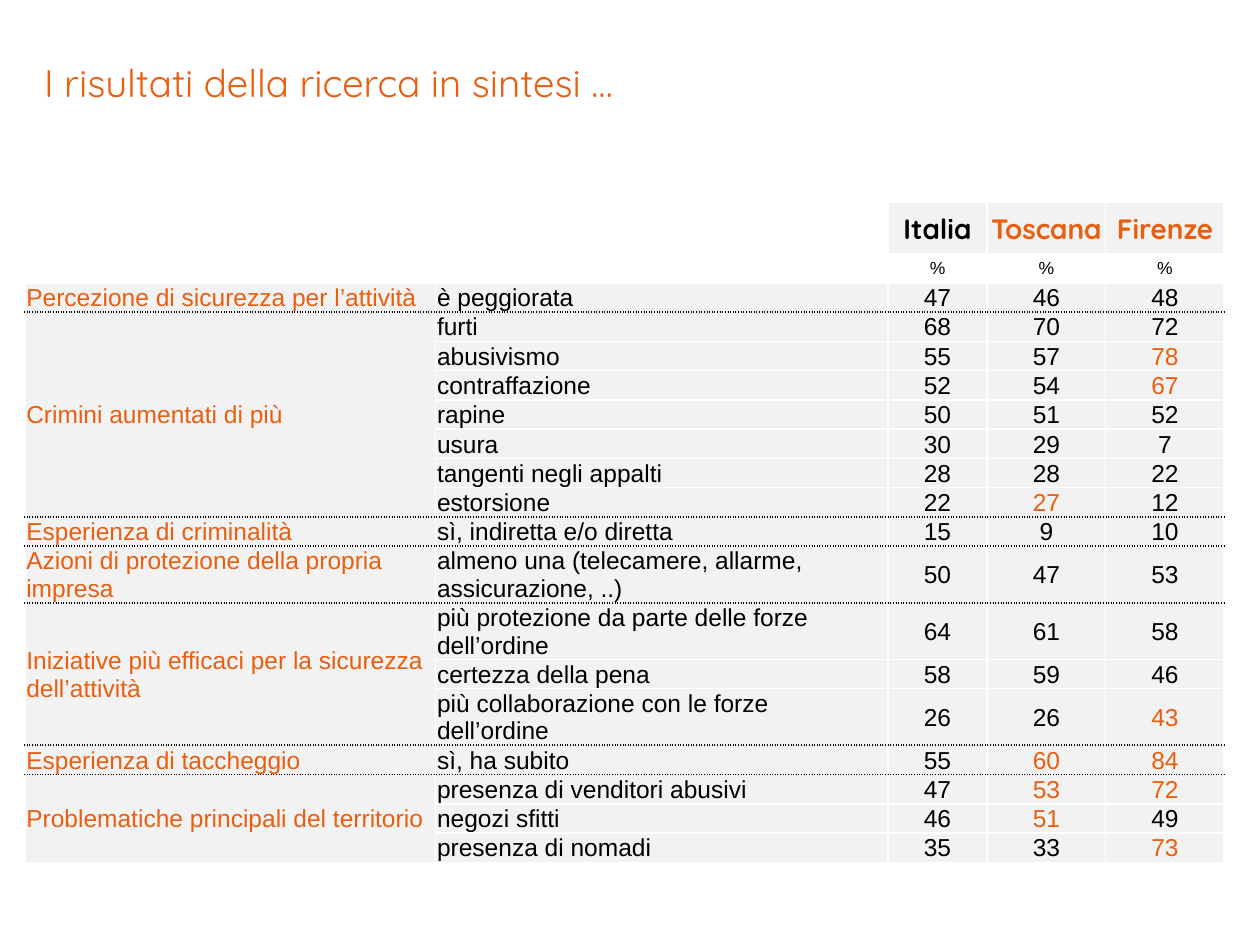
from lxml.etree import SubElement
from pptx import Presentation
from pptx.dml.color import RGBColor
from pptx.enum.text import MSO_ANCHOR as Anchor, MSO_AUTO_SIZE as AutoSize, PP_ALIGN as Align
from pptx.oxml.ns import qn
from pptx.util import Cm, Pt

ORANGE, BLACK, WHITE, GREY = "E95E0F", "000000", "FFFFFF", "F2F2F2"
COLUMN_WIDTHS = (8.28, 9.12, 2.0, 2.39, 2.39)
HEADER_HEIGHT, LINE_HEIGHT, TWO_LINE_HEIGHT = 1.03, 0.59, 1.13
TWO_LINE_LENGTH = 40
HEADERS = (("Italia", BLACK), ("Toscana", ORANGE), ("Firenze", ORANGE))

# Each topic holds its answers with the values; a star marks a highlighted value.
TOPICS = (
    ("Percezione di sicurezza per l’attività", (
        ("è peggiorata", "47 46 48"),)),
    ("Crimini aumentati di più", (
        ("furti", "68 70 72"),
        ("abusivismo", "55 57 78*"),
        ("contraffazione", "52 54 67*"),
        ("rapine", "50 51 52"),
        ("usura", "30 29 7"),
        ("tangenti negli appalti", "28 28 22"),
        ("estorsione", "22 27* 12"))),
    ("Esperienza di criminalità", (
        ("sì, indiretta e/o diretta", "15 9 10"),)),
    ("Azioni di protezione della propria impresa", (
        ("almeno una (telecamere, allarme, assicurazione, ..)", "50 47 53"),)),
    ("Iniziative più efficaci per la sicurezza dell’attività", (
        ("più protezione da parte delle forze dell’ordine", "64 61 58"),
        ("certezza della pena", "58 59 46"),
        ("più collaborazione con le forze dell’ordine", "26 26 43*"))),
    ("Esperienza di taccheggio", (
        ("sì, ha subito", "55 60* 84*"),)),
    ("Problematiche principali del territorio", (
        ("presenza di venditori abusivi", "47 53* 72*"),
        ("negozi sfitti", "46 51* 49"),
        ("presenza di nomadi", "35 33 73*"))),
)


def rgb(color):
    return RGBColor.from_string(color)


def set_attributes(target, values):
    for name, value in values.items():
        setattr(target, name, value)


def write_text(paragraph, text, color, size=14, font="Arial", bold=False, align=Align.LEFT):
    paragraph.alignment = align
    run = paragraph.add_run()
    run.text = text
    set_attributes(run.font, {"size": Pt(size), "name": font, "bold": bold})
    run.font.color.rgb = rgb(color)


def add_border(cell, side, color, dash):
    line = SubElement(cell._tc.get_or_add_tcPr(), qn(f"a:ln{side}"), w=str(Pt(1)))
    fill = SubElement(line, qn("a:solidFill"))
    SubElement(fill, qn("a:srgbClr"), val=color)
    SubElement(line, qn("a:prstDash"), val=dash)


def format_cell(cell, fill, dotted_sides=""):
    set_attributes(cell, {
        "margin_left": Cm(0.03), "margin_right": Cm(0.03),
        "margin_top": Cm(0.03), "margin_bottom": 0,
        "vertical_anchor": Anchor.MIDDLE,
    })
    for side in "LRTB":
        dotted = side in dotted_sides
        add_border(cell, side, BLACK if dotted else WHITE, "sysDot" if dotted else "solid")
    cell.fill.solid()
    cell.fill.fore_color.rgb = rgb(fill)


def write_cell(cell, text, color, **text_format):
    write_text(cell.text_frame.paragraphs[0], text, color, **text_format)


def shrink_empty_cell(cell):
    """Keep an empty cell from making its row taller."""
    SubElement(cell.text_frame.paragraphs[0]._p, qn("a:endParaRPr"), sz="1000")


def add_title(slide, text):
    title = slide.shapes.title
    set_attributes(title, {"left": Cm(0.89), "top": Cm(0.33),
                           "width": Cm(21.21), "height": Cm(1.8)})
    set_attributes(title.text_frame, {
        "margin_left": 0, "margin_right": 0, "margin_top": 0, "margin_bottom": 0,
        "vertical_anchor": Anchor.BOTTOM, "auto_size": AutoSize.NONE, "word_wrap": True,
    })
    write_text(title.text_frame.paragraphs[0], text, ORANGE, size=22, font="Quicksand")


def fill_header(table):
    set_attributes(table.rows[0], {"height": Cm(HEADER_HEIGHT)})
    for row in (0, 1):
        for column in (0, 1):
            format_cell(table.cell(row, column), WHITE)
            shrink_empty_cell(table.cell(row, column))
    for column, (name, color) in enumerate(HEADERS, start=2):
        name_cell, unit_cell = table.cell(0, column), table.cell(1, column)
        format_cell(name_cell, GREY)
        write_cell(name_cell, name, color, size=16, font="Quicksand", bold=True,
                   align=Align.CENTER)
        format_cell(unit_cell, WHITE)
        write_cell(unit_cell, "%", BLACK, size=10, align=Align.CENTER)


def fill_topic(table, first_row, topic, answers):
    """Fill one block of rows, with dotted lines towards the other blocks."""
    last_row = first_row + len(answers) - 1
    top = "T" if first_row > 2 else ""
    bottom = "B" if last_row < len(table.rows) - 1 else ""
    for row, (answer, values) in enumerate(answers, start=first_row):
        if len(answer) > TWO_LINE_LENGTH:
            table.rows[row].height = Cm(TWO_LINE_HEIGHT)
        dotted = (top if row == first_row else "") + (bottom if row == last_row else "")
        for column in range(len(COLUMN_WIDTHS)):
            spanning = column == 0 and row == first_row
            format_cell(table.cell(row, column), GREY, top + bottom if spanning else dotted)
        write_cell(table.cell(row, 1), answer, BLACK)
        for column, value in enumerate(values.split(), start=2):
            color = ORANGE if value.endswith("*") else BLACK
            write_cell(table.cell(row, column), value.rstrip("*"), color, align=Align.CENTER)
    topic_cell = table.cell(first_row, 0)
    if last_row > first_row:
        topic_cell.merge(table.cell(last_row, 0))
    write_cell(topic_cell, topic, ORANGE)


def add_results_table(slide):
    row_count = 2 + sum(len(answers) for _, answers in TOPICS)
    table = slide.shapes.add_table(
        row_count, len(COLUMN_WIDTHS), Cm(0.5), Cm(4.08),
        Cm(sum(COLUMN_WIDTHS)), Cm(LINE_HEIGHT * row_count)).table
    set_attributes(table, {"first_row": False, "horz_banding": False})
    for column, width in zip(table.columns, COLUMN_WIDTHS):
        column.width = Cm(width)
    for row in table.rows:
        row.height = Cm(LINE_HEIGHT)
    fill_header(table)
    first_row = 2
    for topic, answers in TOPICS:
        fill_topic(table, first_row, topic, answers)
        first_row += len(answers)


def main():
    presentation = Presentation()
    set_attributes(presentation, {"slide_width": Cm(25.4), "slide_height": Cm(19.05)})
    slide = presentation.slides.add_slide(presentation.slide_layouts[5])
    add_title(slide, "I risultati della ricerca in sintesi …")
    add_results_table(slide)
    presentation.save("out.pptx")


if __name__ == "__main__":
    main()
